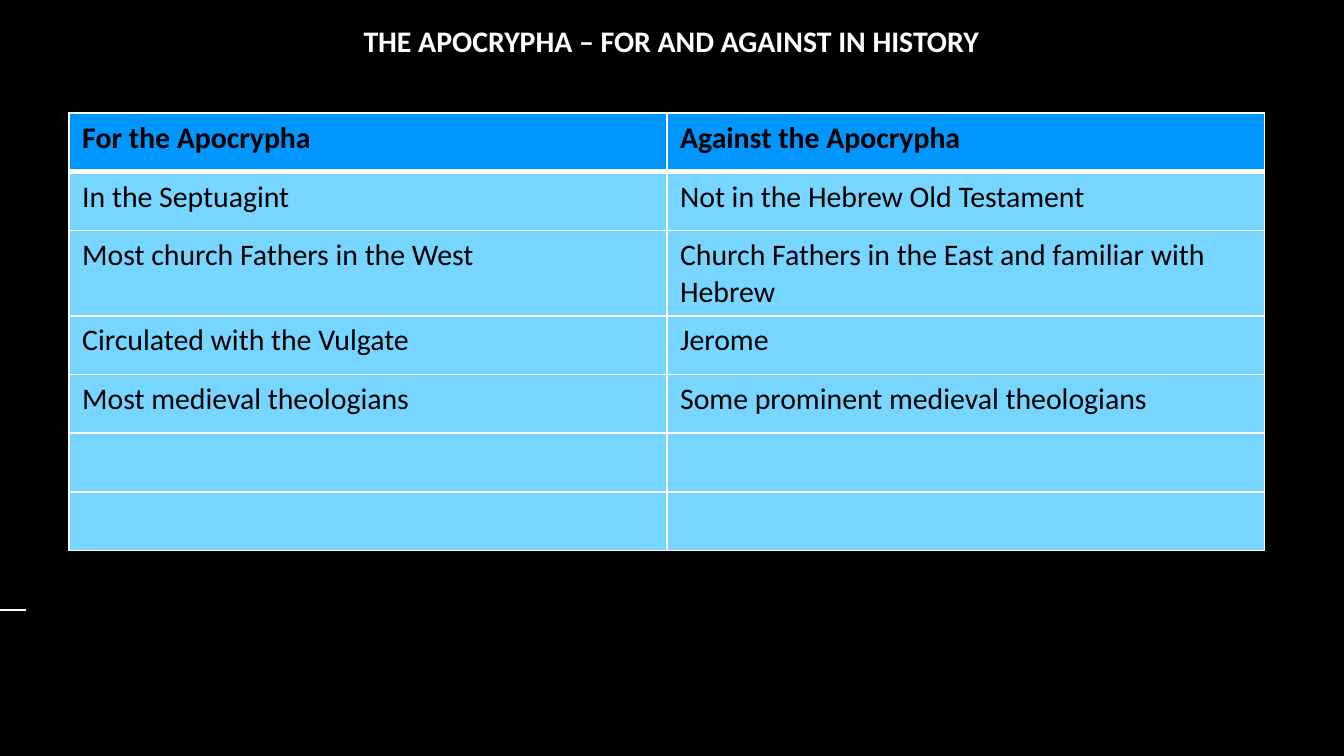
from lxml import etree
from pptx import Presentation
from pptx.dml.color import RGBColor
from pptx.enum.shapes import MSO_CONNECTOR
from pptx.enum.text import PP_ALIGN
from pptx.oxml.ns import qn
from pptx.util import Cm, Pt

STRAIGHT = MSO_CONNECTOR.STRAIGHT
LEFT, CENTER = PP_ALIGN.LEFT, PP_ALIGN.CENTER
COLORS = {
    "background": "000000",
    "white": "FFFFFF",
    "black": "000000",
    "header": "0096FF",
    "body": "76D6FF",
}


def rgb(name):
    return RGBColor.from_string(COLORS[name])


def write(tf, text, color="black", bold=False, align=LEFT, size=16):
    p = tf.paragraphs[0]
    p.alignment = align
    r = p.add_run()
    r.text = text
    r.font.name = "Calibri"
    r.font.size = Pt(size)
    r.font.bold = bold
    r.font.color.rgb = rgb(color)


prs = Presentation()
prs.slide_width, prs.slide_height = Cm(25.4), Cm(14.29)
s = prs.slides.add_slide(prs.slide_layouts[6])
s.background.fill.solid()
s.background.fill.fore_color.rgb = rgb("background")

# Short rule at the left edge
rule = s.shapes.add_connector(STRAIGHT, Cm(0), Cm(11.53), Cm(0.5), Cm(11.53))
rule.line.color.rgb = rgb("white")
rule.line.width = Pt(0.75)
etree.SubElement(rule._element.spPr, qn("a:effectLst"))

# Title
title = s.shapes.add_textbox(Cm(6.38), Cm(0.3), Cm(12.62), Cm(0.86))
title.text_frame.word_wrap = True
write(title.text_frame, "THE APOCRYPHA – FOR AND AGAINST IN HISTORY",
      color="white", bold=True, align=CENTER)

# Table of arguments, with two rows left open
rows = [
    ("For the Apocrypha", "Against the Apocrypha"),
    ("In the Septuagint", "Not in the Hebrew Old Testament"),
    ("Most church Fathers in the West",
     "Church Fathers in the East and familiar with Hebrew"),
    ("Circulated with the Vulgate", "Jerome"),
    ("Most medieval theologians", "Some prominent medieval theologians"),
    ("", ""),
    ("", ""),
]
row_height = Cm(1.11)
table = s.shapes.add_table(len(rows), 2, Cm(1.3), Cm(2.14), Cm(22.6),
                           row_height * len(rows)).table
for column in table.columns:
    column.width = Cm(11.3)

for i, texts in enumerate(rows):
    table.rows[i].height = row_height
    for j, text in enumerate(texts):
        cell = table.cell(i, j)
        # Borders, with a thick line under the header
        tc_pr = cell._tc.get_or_add_tcPr()
        for side in ("L", "R", "T", "B"):
            thick = (i, side) in ((0, "B"), (1, "T"))
            ln = etree.SubElement(tc_pr, qn(f"a:ln{side}"),
                                  w=str(Pt(3 if thick else 1)))
            fill = etree.SubElement(ln, qn("a:solidFill"))
            etree.SubElement(fill, qn("a:srgbClr"), val=COLORS["white"])
        cell.fill.solid()
        cell.fill.fore_color.rgb = rgb("header" if i == 0 else "body")
        if text:
            write(cell.text_frame, text, bold=i == 0)

prs.save("out.pptx")
